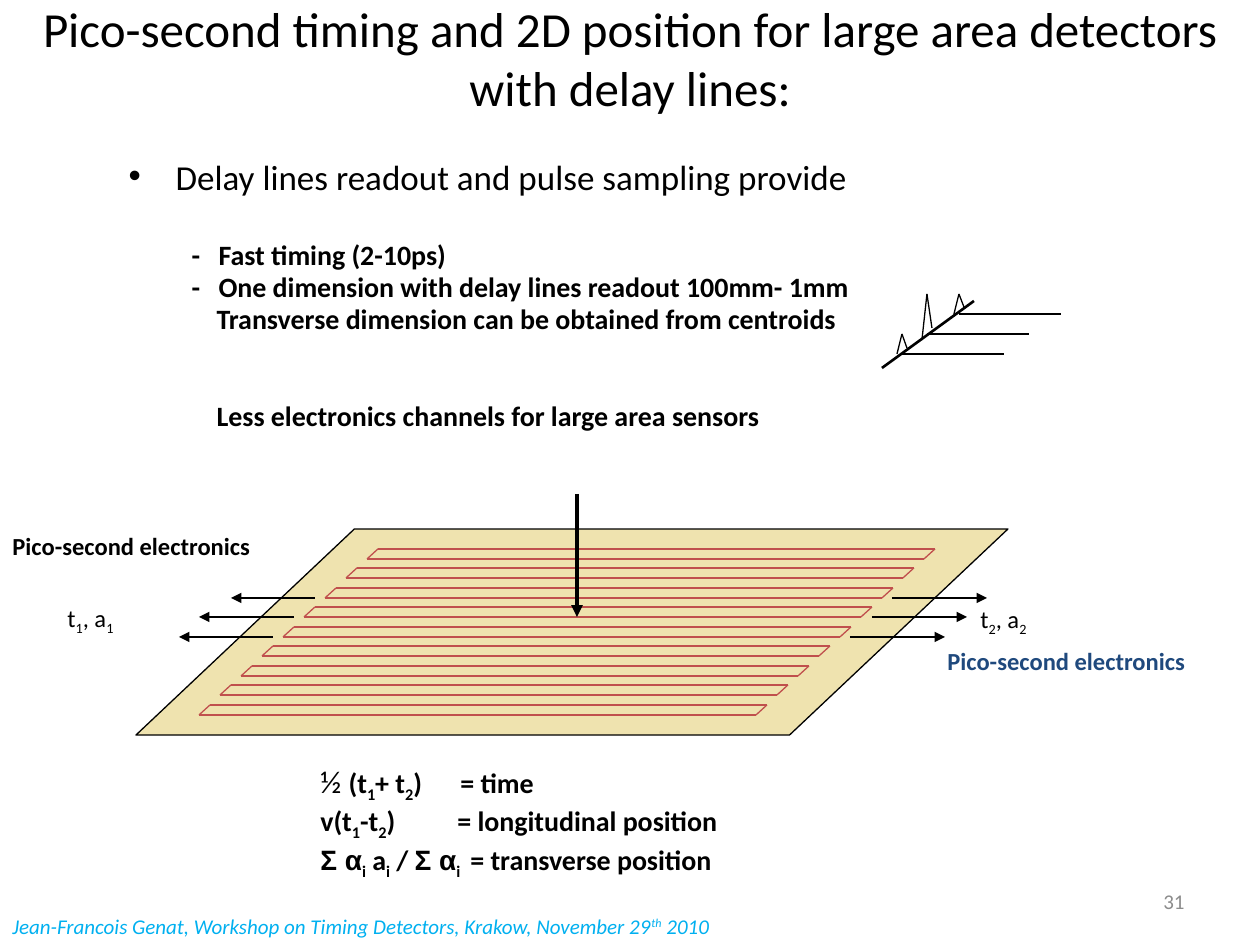
from lxml import etree
from pptx import Presentation
from pptx import util as u
from pptx.dml.color import RGBColor
from pptx.enum import shapes, text
from pptx.oxml.ns import qn

PX = 914400 // 126
COLORS = {"black": "000000", "board": "EFE3AF", "strip": "C0504D",
          "navy": "1F497D", "gray": "8C8C8C", "cyan": "00B0F0"}


def add_line(x1, y1, x2, y2, color="black", width=0.75, arrow=False):
    c = s.shapes.add_connector(shapes.MSO_CONNECTOR.STRAIGHT,
                               x1 * PX, y1 * PX, x2 * PX, y2 * PX)
    c.line.color.rgb = RGBColor.from_string(COLORS[color])
    c.line.width = u.Pt(width)
    if arrow:
        etree.SubElement(c.line._get_or_add_ln(), qn("a:tailEnd"), type="triangle")
    etree.SubElement(c._element.spPr, qn("a:effectLst"))


def add_text(x, y, w, h, lines, size, color="black", bold=False, italic=False, base=-25000):
    tf = s.shapes.add_textbox(x * PX, y * PX, w * PX, h * PX).text_frame
    tf.word_wrap = True
    for i, line in enumerate(lines):
        p = tf.add_paragraph() if i else tf.paragraphs[0]
        p.font.size, p.font.name = u.Pt(size), "Calibri"
        p.font.bold, p.font.italic = bold, italic
        p.font.color.rgb = RGBColor.from_string(COLORS[color])
        for k, part in enumerate(line.split("|")):
            if part:
                r = p.add_run()
                r.text = part
                r.font.size, r.font.name = u.Pt(size), "Calibri"
                r.font.bold, r.font.italic = bold, italic
                r.font.color.rgb = RGBColor.from_string(COLORS[color])
                if k % 2:
                    r._r.get_or_add_rPr().set("baseline", str(base))
    return tf


prs = Presentation()
prs.slide_width, prs.slide_height = 1260 * PX, 945 * PX
s = prs.slides.add_slide(prs.slide_layouts[1])

title, body = s.shapes.title, s.placeholders[1]
title.left, title.top, title.width, title.height = 0, 0, 1260 * PX, 115 * PX
tf = title.text_frame
tf.text = "Pico-second timing and 2D position for large area detectors with delay lines:"
tf.auto_size = text.MSO_AUTO_SIZE.NONE
tf.vertical_anchor = text.MSO_ANCHOR.MIDDLE
p = tf.paragraphs[0]
p.alignment = text.PP_ALIGN.CENTER
p.font.size, p.font.name = u.Pt(28), "Calibri"

body.left, body.top, body.width, body.height = 116 * PX, 157 * PX, 1103 * PX, 305 * PX
tf = body.text_frame
tf.auto_size = text.MSO_AUTO_SIZE.NONE
points = [
    ("Delay lines readout and pulse sampling provide", 0, 47, -47, 4),
    ("-\tFast timing (2-10ps)", 1, 90, -27, 27),
    ("-\tOne dimension with delay lines readout 100mm- 1mm", 1, 90, -27, 3),
    ("Transverse dimension can be obtained from centroids", 1, 88, 0, 3),
    ("Less electronics channels for large area sensors", 1, 88, 0, 40),
]
for i, (line, level, margin, indent, before) in enumerate(points):
    p = tf.add_paragraph() if i else tf.paragraphs[0]
    p.text, p.level = line, level
    p.line_spacing, p.space_before = 0.8, u.Pt(before)
    p.font.size, p.font.name = u.Pt(16 if level else 20), "Calibri"
    p.font.bold = level == 1
    pPr = p._p.get_or_add_pPr()
    pPr.set("marL", str(margin * PX))
    pPr.set("indent", str(indent * PX))
    if level:
        pPr.insert_element_before(etree.Element(qn("a:buNone")), "a:tabLst", "a:defRPr")

board = s.shapes.add_shape(shapes.MSO_SHAPE.PARALLELOGRAM,
                           136 * PX, 529 * PX, 872 * PX, 206 * PX)
board.adjustments[0] = 1.06
board.shadow.inherit = False
board.fill.solid()
board.fill.fore_color.rgb = RGBColor.from_string(COLORS["board"])
board.line.color.rgb = RGBColor.from_string(COLORS["black"])
board.line.width = u.Pt(0.75)

for i in range(9):
    x, y = 378 - 21 * i, 549 + 39 * i // 2
    corners = [(x, y), (x + 557, y), (x + 546, y + 10), (x - 11, y + 10)]
    for a, b in zip(corners, corners[1:] + corners[:1]):
        add_line(*a, *b, color="strip")

add_line(577, 494, 577, 617, width=2.25, arrow=True)
for y, left_from, left_to, right_from in [(598, 315, 231, 892), (617, 294, 199, 872),
                                          (637, 273, 179, 850)]:
    add_line(left_from, y, left_to, y, arrow=True)
    add_line(right_from, y, right_from + 95, y, arrow=True)

add_line(882, 368, 974, 301, width=1.5)
for x, base_y, peak_y, end_y in [(897, 354, 334, 348), (922, 340, 294, 328),
                                 (954, 314, 294, 307)]:
    add_line(x, base_y, x + 5, peak_y)
    add_line(x + 5, peak_y, x + 10, end_y)
for x, y in [(902, 354), (927, 334), (959, 314)]:
    add_line(x, y, x + 102, y)

add_text(55, 597, 90, 42, ["t|1|, a|1"], 14)
add_text(968, 598, 90, 42, ["t|2|, a|2"], 14)
add_text(935, 640, 265, 43, ["Pico-second electronics"], 14, "navy", bold=True)
add_text(0, 525, 265, 43, ["Pico-second electronics"], 14, bold=True)

formulas = add_text(308, 756, 533, 118, [
    "½ ||(t|1|+ t|2|)\t= time",
    "v(t|1|-t|2|)\t= longitudinal position",
    "Σ α|i| a|i| / ||Σ α|i|\t= transverse position",
], 16, bold=True)
for p, tab in zip(formulas.paragraphs, (140, 137, 150)):
    tabs = etree.Element(qn("a:tabLst"))
    etree.SubElement(tabs, qn("a:tab"), pos=str(tab * PX), algn="l")
    p._p.get_or_add_pPr().insert_element_before(tabs, "a:defRPr")
    for r in p.runs:
        if "Σ" in r.text:
            r.font.name = "Arial"
half = formulas.paragraphs[0].runs[0]
half.font.size, half.font.bold = u.Pt(18), False

number = add_text(903, 876, 294, 50, ["31"], 12, "gray")
number.vertical_anchor = text.MSO_ANCHOR.MIDDLE
number.paragraphs[0].alignment = text.PP_ALIGN.RIGHT
add_text(0, 907, 1134, 38,
         ["Jean-Francois Genat, Workshop on Timing Detectors, Krakow, November 29|th| 2010"],
         12, "cyan", italic=True, base=30000)

prs.save("out.pptx")
